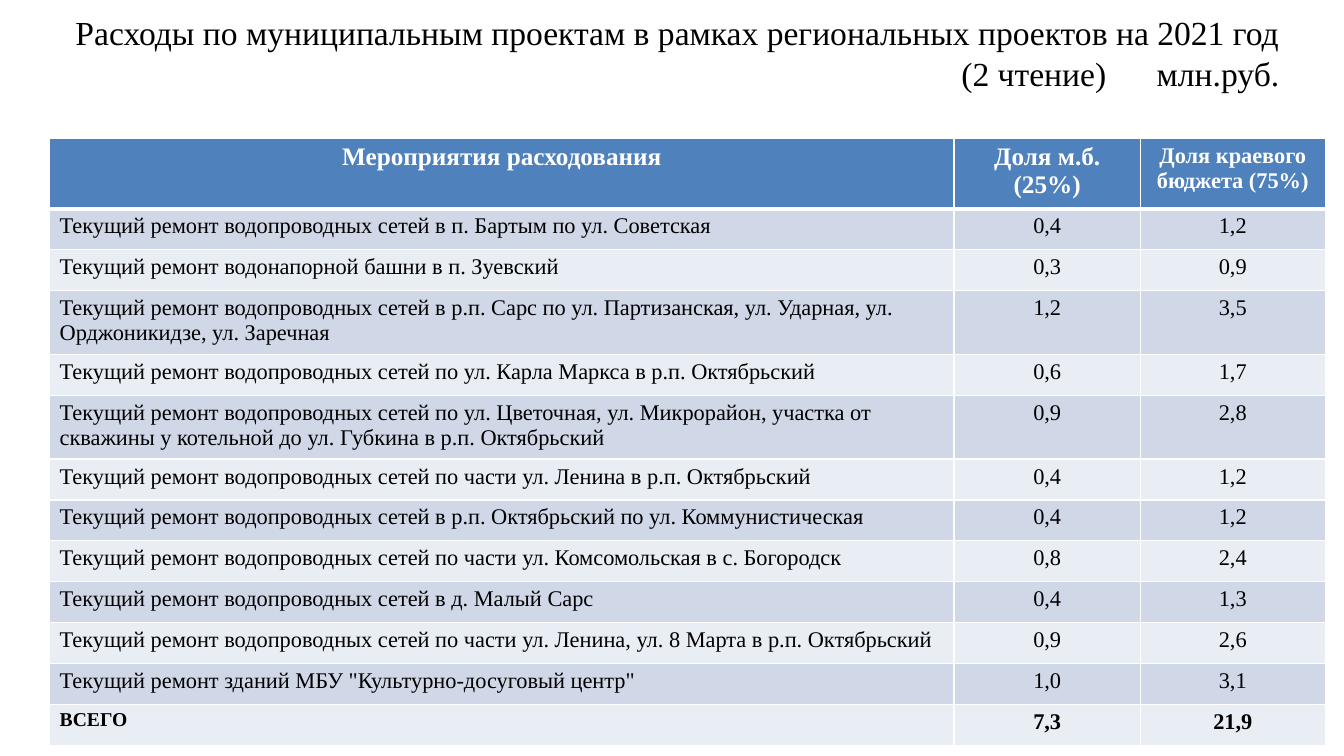
from dataclasses import dataclass

from lxml.etree import SubElement
from pptx import Presentation
from pptx.dml.color import RGBColor as RGB
from pptx.enum.text import MSO_ANCHOR as ANCHOR, PP_ALIGN as ALIGN
from pptx.oxml.ns import qn
from pptx.util import Cm, Pt


@dataclass(frozen=True)
class Theme:
    """Colours, font and type sizes of the slide."""
    font: str = "Times New Roman"
    ink: str = "000000"
    paper: str = "FFFFFF"
    header: str = "4F81BD"
    bands: tuple = ("D0D8E8", "E9EDF4")
    title: int = 24
    title_leading: float = 29.3
    title_gap: int = 30
    head: int = 18
    body: int = 16
    total: int = 14
    thin: int = 1
    thick: int = 3


T = Theme()
TITLE = ("Расходы по муниципальным проектам в рамках региональных проектов на 2021 год",
         "(2 чтение)", "млн.руб.")
HEADER = ("Мероприятия расходования", "Доля м.б. (25%)", "Доля краевого бюджета (75%)")
WORKS = "Текущий ремонт "
NETS = WORKS + "водопроводных сетей "
EXPENSES = [
    (NETS + "в п. Бартым по ул. Советская", "0,4", "1,2"),
    (WORKS + "водонапорной башни в п. Зуевский", "0,3", "0,9"),
    (NETS + "в р.п. Сарс по ул. Партизанская, ул. Ударная, ул. Орджоникидзе, ул. Заречная",
     "1,2", "3,5"),
    (NETS + "по ул. Карла Маркса в р.п. Октябрьский", "0,6", "1,7"),
    (NETS + "по ул. Цветочная, ул. Микрорайон, участка от скважины у котельной "
     "до ул. Губкина в р.п. Октябрьский", "0,9", "2,8"),
    (NETS + "по части ул. Ленина в р.п. Октябрьский", "0,4", "1,2"),
    (NETS + "в р.п. Октябрьский по ул. Коммунистическая", "0,4", "1,2"),
    (NETS + "по части ул. Комсомольская в с. Богородск", "0,8", "2,4"),
    (NETS + "в д. Малый Сарс", "0,4", "1,3"),
    (NETS + "по части ул. Ленина, ул. 8 Марта в р.п. Октябрьский", "0,9", "2,6"),
    (WORKS + 'зданий МБУ "Культурно-досуговый центр"', "1,0", "3,1"),
    ("ВСЕГО", "7,3", "21,9"),
]
COL_SHARES = (0.709, 0.146, 0.145)
HEADER_HEIGHT, ROW_HEIGHT, TALL_HEIGHT = 1.66, 1.03, 1.51
TALL_ROWS = (3, 5)


def add_text(p, text, size=T.body, color=T.ink, bold=False, align=ALIGN.LEFT, spacing=None):
    """Append a formatted run to a paragraph."""
    p.alignment = align
    r = p.add_run()
    r.text = text
    r.font.name = T.font
    r.font.size = Pt(size)
    r.font.bold = bold
    r.font.color.rgb = RGB.from_string(color)
    if spacing:
        r.font._element.set("spc", str(spacing * 100))


def set_borders(cell, **widths):
    """Draw white cell borders with widths in points, keyed by side."""
    tc_pr = cell._tc.get_or_add_tcPr()
    for i, side in enumerate("LRTB"):
        ln = SubElement(tc_pr, qn(f"a:ln{side}"), w=str(Pt(widths.get(side, T.thin))))
        fill = SubElement(ln, qn("a:solidFill"))
        SubElement(fill, qn("a:srgbClr"), val=T.paper)
        tc_pr.insert(i, ln)


def fill_cell(cell, text, fill, borders, **fmt):
    """Write one table cell with its fill and borders."""
    add_text(cell.text_frame.paragraphs[0], text, **fmt)
    cell.fill.solid()
    cell.fill.fore_color.rgb = RGB.from_string(fill)
    set_borders(cell, **borders)


def add_title(s, x, y, w, h):
    """Place the right-aligned two-line title in its box."""
    tf = s.shapes.add_textbox(Cm(x), Cm(y), Cm(w), Cm(h)).text_frame
    tf.word_wrap = True
    tf.vertical_anchor = ANCHOR.MIDDLE
    p = tf.paragraphs[0]
    p.line_spacing = Pt(T.title_leading)
    heading, reading, unit = TITLE
    fmt = dict(size=T.title, align=ALIGN.RIGHT)
    add_text(p, heading, **fmt)
    p.add_line_break()
    add_text(p, reading, **fmt)
    add_text(p, " ", spacing=T.title_gap, **fmt)
    add_text(p, unit, **fmt)


def add_expenses(s, x, y, w):
    """Place the expenses table at the given corner and width."""
    heights = [HEADER_HEIGHT] + [TALL_HEIGHT if i in TALL_ROWS else ROW_HEIGHT
                                 for i in range(1, len(EXPENSES) + 1)]
    table = s.shapes.add_table(len(heights), len(HEADER), Cm(x), Cm(y),
                               Cm(w), Cm(sum(heights))).table
    for col, share in zip(table.columns, COL_SHARES):
        col.width = Cm(w * share)
    for row, height in zip(table.rows, heights):
        row.height = Cm(height)
    for j, text in enumerate(HEADER):
        fill_cell(table.cell(0, j), text, T.header, {"B": T.thick}, color=T.paper, bold=True,
                  size=T.body if j == 2 else T.head, align=ALIGN.CENTER)
    for i, values in enumerate(EXPENSES, 1):
        last = i == len(EXPENSES)
        borders = {"T": T.thick} if i == 1 else {}
        for j, text in enumerate(values):
            fill_cell(table.cell(i, j), text, T.bands[(i - 1) % 2], borders, bold=last,
                      size=T.total if last and j == 0 else T.body,
                      align=ALIGN.CENTER if j else ALIGN.LEFT)


def main():
    """Build the slide and save it."""
    prs = Presentation()
    prs.slide_width, prs.slide_height = Cm(33.87), Cm(19.05)
    s = prs.slides.add_slide(prs.slide_layouts[6])
    add_title(s, 1.5, -0.28, 30.99, 3.18)
    add_expenses(s, 1.25, 3.48, 32.15)
    prs.save("out.pptx")


if __name__ == "__main__":
    main()
